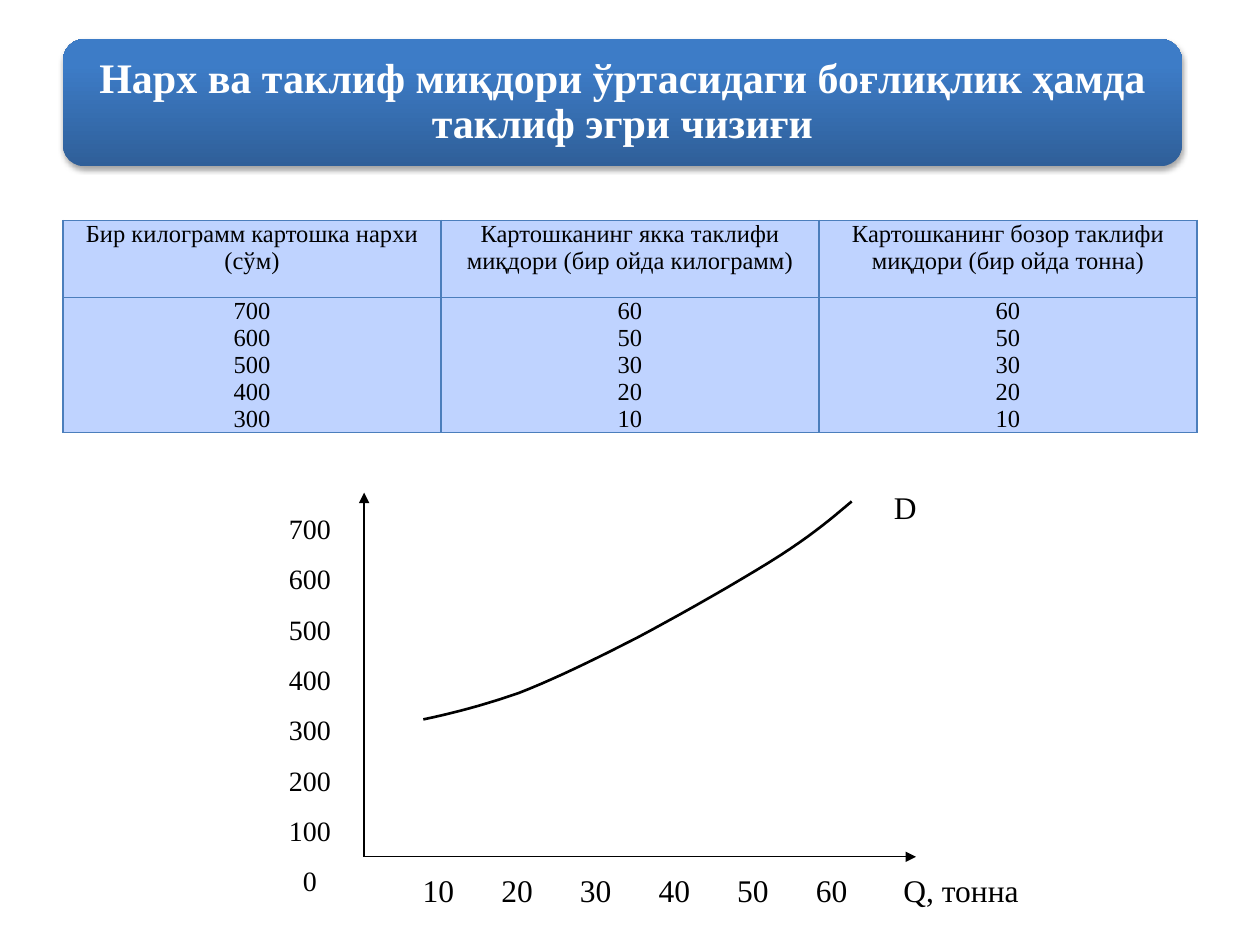
from lxml import etree
from pptx import Presentation, util as u
from pptx.dml.color import RGBColor
from pptx.enum import shapes, text
from pptx.oxml import ns

COLORS = {
    "dark": "2F5F99", "blue": "3D7CC7", "border": "4B7EBC",
    "cell": "BFD3FF", "white": "FFFFFF", "black": "000000",
}
FONT = "Times New Roman"
CENTER, LEFT = text.PP_ALIGN.CENTER, text.PP_ALIGN.LEFT
RECT = shapes.MSO_SHAPE.RECTANGLE
ROUND = shapes.MSO_SHAPE.ROUNDED_RECTANGLE


def rgb(name):
    return RGBColor.from_string(COLORS[name])


def add_xml(parent, tag, **attrs):
    return etree.SubElement(parent, ns.qn(tag), attrs)


def write(tf, lines, size=18, color="black", bold=False, align=CENTER,
          spacing=None, tabs=(), margins=(0.1, 0.05, 0.1, 0.05)):
    """Fill a text frame, one paragraph per line; tabs are (inches, alignment) pairs."""
    tf.word_wrap = True
    tf.vertical_anchor = text.MSO_ANCHOR.MIDDLE
    (tf.margin_left, tf.margin_top,
     tf.margin_right, tf.margin_bottom) = map(u.Inches, margins)
    for i, line in enumerate(lines):
        p = tf.add_paragraph() if i else tf.paragraphs[0]
        p.alignment = align
        if spacing:
            p.line_spacing = spacing
        if tabs:
            tab_list = add_xml(p._p.get_or_add_pPr(), "a:tabLst")
            for pos, kind in tabs:
                add_xml(tab_list, "a:tab", pos=str(u.Inches(pos)), algn=kind)
        r = p.add_run()
        r.text = line
        r.font.name, r.font.size, r.font.bold = FONT, u.Pt(size), bold
        r.font.color.rgb = rgb(color)


def cubic(a, b, c, d, t):
    return tuple((1 - t) ** 3 * w + 3 * (1 - t) ** 2 * t * x
                 + 3 * (1 - t) * t ** 2 * y + t ** 3 * z
                 for w, x, y, z in zip(a, b, c, d))


class Builder:
    def __init__(self, s):
        self.s = s

    def box(self, kind, at, lines, **style):
        sp = self.s.shapes.add_shape(kind, *map(u.Inches, at))
        sp.shadow.inherit = False
        sp.fill.solid()
        sp.fill.fore_color.rgb = rgb("white")
        sp.line.color.rgb = rgb("white")
        sp.line.width = u.Pt(2)
        write(sp.text_frame, lines, **style)
        return sp

    def banner(self, at, title):
        sp = self.box(ROUND, at, [title], size=24, color="white", bold=True,
                      spacing=0.9, margins=(0.15,) * 4)
        sp.line.fill.background()
        sp.fill.gradient()
        sp.fill.gradient_angle = 90
        stops = zip(sp.fill.gradient_stops, ("dark", "blue"), (0, 0.8))
        for stop, color, pos in stops:
            stop.color.rgb = rgb(color)
            stop.position = pos
        effects = sp._element.spPr.find(ns.qn("a:effectLst"))
        shadow = add_xml(effects, "a:outerShdw", blurRad=str(u.Pt(3.1)),
                         dist=str(u.Pt(1.8)), dir="5400000", rotWithShape="0")
        color = add_xml(shadow, "a:srgbClr", val=COLORS["black"])
        add_xml(color, "a:alpha", val="35000")

    def table(self, at, rows, heights):
        frame = self.s.shapes.add_table(len(rows), len(rows[0]), *map(u.Inches, at))
        table = frame.table
        table.first_row = table.horz_banding = False
        for i, (row, height) in enumerate(zip(rows, heights)):
            table.rows[i].height = u.Inches(height)
            for j, lines in enumerate(row):
                cell = table.cell(i, j)
                write(cell.text_frame, lines, size=14)
                cell.vertical_anchor = text.MSO_ANCHOR.TOP
                cell.margin_left = cell.margin_right = u.Inches(0.01)
                cell.margin_top = cell.margin_bottom = 0
                for side in "LRTB":
                    ln = add_xml(cell._tc.get_or_add_tcPr(), "a:ln" + side,
                                 w=str(u.Pt(0.75)))
                    add_xml(add_xml(ln, "a:solidFill"), "a:srgbClr",
                            val=COLORS["border"])
                cell.fill.solid()
                cell.fill.fore_color.rgb = rgb("cell")

    def arrow(self, start, end):
        sp = self.s.shapes.add_connector(
            shapes.MSO_CONNECTOR.STRAIGHT, *map(u.Inches, start + end))
        sp.line.color.rgb = rgb("black")
        sp.line.width = u.Pt(0.75)
        spPr = sp._element.spPr
        add_xml(spPr.find(ns.qn("a:ln")), "a:tailEnd", type="triangle")
        add_xml(spPr, "a:effectLst")

    def curve(self, points, steps=10):
        """Draw joined cubic Bezier segments as a fine open polyline."""
        points = [tuple(map(u.Inches, point)) for point in points]
        path = [cubic(*points[i:i + 4], k / steps)
                for i in range(0, len(points) - 1, 3)
                for k in range(1, steps + 1)]
        fb = self.s.shapes.build_freeform(*points[0])
        fb.add_line_segments(path, close=False)
        sp = fb.convert_to_shape()
        sp.shadow.inherit = False
        sp.fill.background()
        sp.line.color.rgb = rgb("black")
        sp.line.width = u.Pt(1.5)


def main():
    prs = Presentation()
    prs.slide_width, prs.slide_height = u.Inches(10), u.Inches(7.5)
    b = Builder(prs.slides.add_slide(prs.slide_layouts[6]))

    b.banner((0.5, 0.31, 8.88, 1.01),
             "Нарх ва таклиф миқдори ўртасидаги боғлиқлик ҳамда таклиф эгри чизиғи")

    prices = ["700", "600", "500", "400", "300"]
    amounts = ["60", "50", "30", "20", "10"]
    headers = [["Бир килограмм картошка нархи (сўм)"],
               ["Картошканинг якка таклифи миқдори (бир ойда килограмм)"],
               ["Картошканинг бозор таклифи миқдори (бир ойда тонна)"]]
    b.table((0.5, 1.75, 9, 1.68), [headers, [prices, amounts, amounts]],
            (0.61, 1.07))

    origin = (2.89, 6.8)
    b.arrow(origin, (7.27, 6.8))
    b.arrow(origin, (2.89, 3.91))
    b.curve([(3.36, 5.71), (3.6, 5.66), (3.83, 5.6), (4.12, 5.5),
             (4.4, 5.39), (4.71, 5.24), (5.06, 5.06),
             (5.4, 4.88), (5.91, 4.59), (6.19, 4.41),
             (6.47, 4.23), (6.63, 4.09), (6.76, 3.98)])

    b.box(RECT, (2.11, 3.83, 0.7, 3.44), [str(n) for n in range(700, -1, -100)],
          size=16, spacing=u.Pt(28.75), margins=(0.1, 0.05, 0.1, 0.1))
    ticks = [str(n) for n in range(10, 70, 10)]
    tabs = [(0.36 + 0.624 * i, "ctr") for i in range(len(ticks))] + [(4.05, "l")]
    b.box(RECT, (3.12, 6.87, 5.08, 0.39), ["\t" + "\t".join(ticks + ["Q, тонна"])],
          align=LEFT, tabs=tabs, margins=(0, 0.05, 0, 0.05))
    b.box(ROUND, (6.95, 3.75, 0.47, 0.55), ["D"])

    prs.save("out.pptx")


if __name__ == "__main__":
    main()
